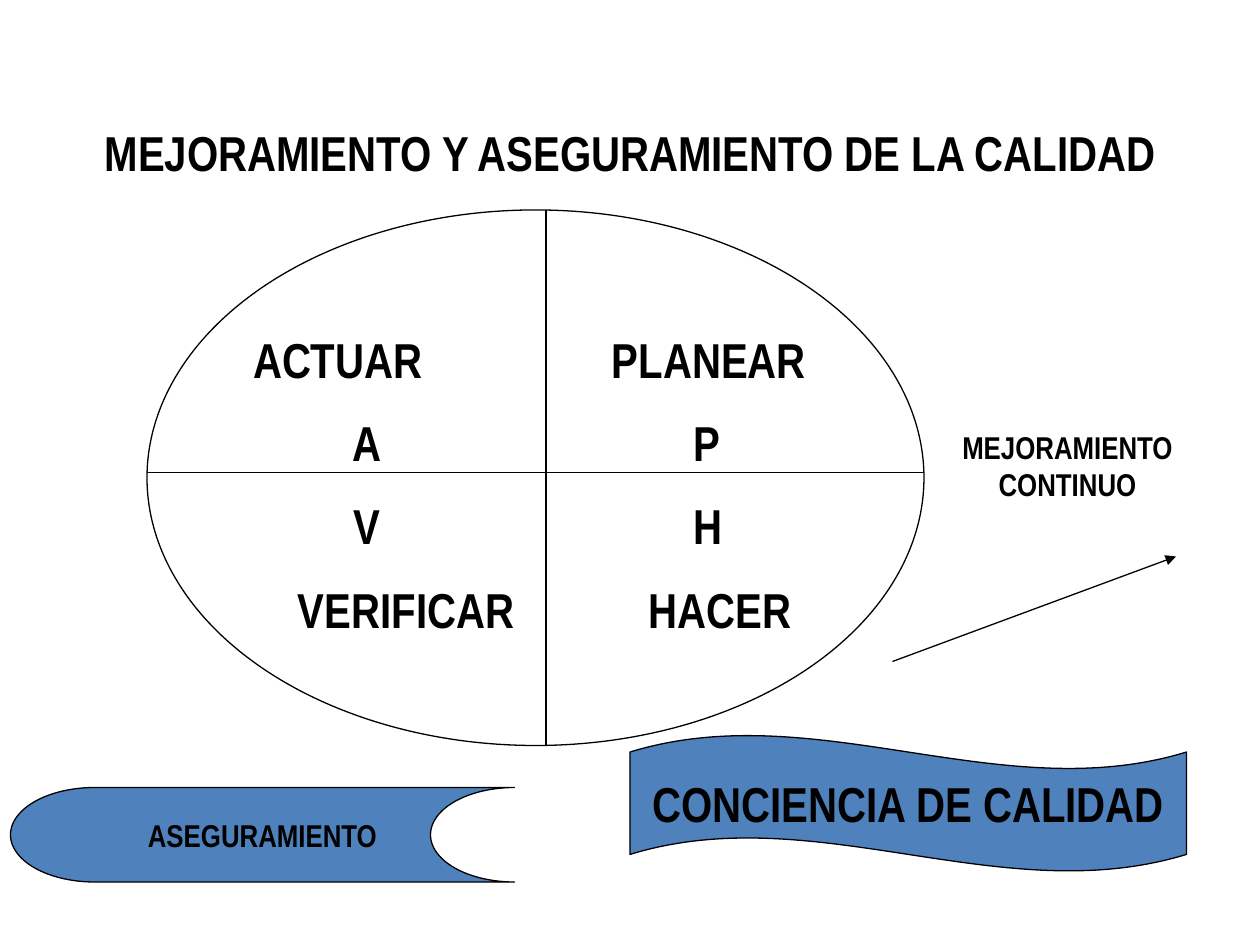
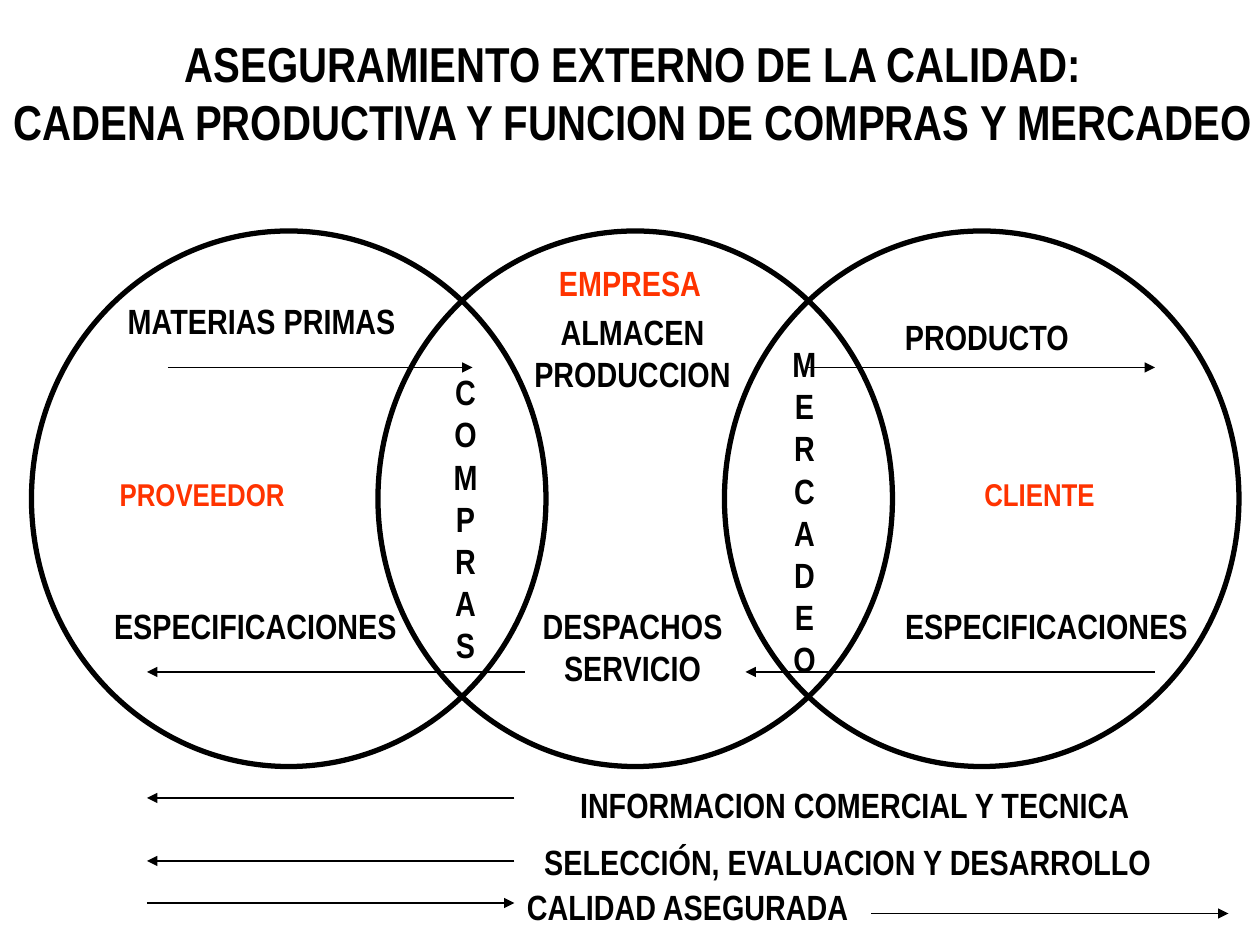
from typing import NamedTuple

from lxml import etree
from pptx import Presentation
from pptx.dml.color import RGBColor
from pptx.enum.shapes import MSO_CONNECTOR, MSO_SHAPE
from pptx.enum.text import MSO_ANCHOR, PP_ALIGN
from pptx.oxml.ns import qn
from pptx.util import Pt

BLACK = RGBColor(0x00, 0x00, 0x00)
BLUE = RGBColor(0x4F, 0x81, 0xBD)
RED = RGBColor(0xFF, 0x33, 0x00)
FONT = "Arial Narrow"
TITLE_SIZE, BODY_SIZE, SMALL_SIZE = 28, 20, 18
THIN, THICK = 0.75, 3

ELLIPSE = MSO_SHAPE.OVAL
WAVE = MSO_SHAPE.WAVE
STORAGE = MSO_SHAPE.FLOWCHART_STORED_DATA
STRAIGHT = MSO_CONNECTOR.STRAIGHT
CENTER = PP_ALIGN.CENTER
MIDDLE = MSO_ANCHOR.MIDDLE


class Label(NamedTuple):
    """Text centred on (x, y), in points."""
    text: str
    x: float
    y: float
    width: float
    size: float = BODY_SIZE
    color: RGBColor = BLACK


class Line(NamedTuple):
    x1: float
    y1: float
    x2: float
    y2: float
    arrow: bool = True


class Figure(NamedTuple):
    kind: int
    left: float
    top: float
    width: float
    height: float
    fill: RGBColor | None = None
    weight: float = THIN
    text: str = ""
    size: float = BODY_SIZE


def write_text(shape, text: str, *, size: float = BODY_SIZE,
               color: RGBColor = BLACK) -> None:
    frame = shape.text_frame
    frame.word_wrap = False
    frame.vertical_anchor = MIDDLE
    frame.text = text
    for paragraph in frame.paragraphs:
        paragraph.alignment = CENTER
        for run in paragraph.runs:
            run.font.name = FONT
            run.font.size = Pt(size)
            run.font.bold = True
            run.font.color.rgb = color


def draw_label(slide, label: Label) -> None:
    height = (label.text.count("\n") + 1) * label.size * 1.2 + 7.2
    box = slide.shapes.add_textbox(
        Pt(label.x - label.width / 2), Pt(label.y - height / 2),
        Pt(label.width), Pt(height))
    write_text(box, label.text, size=label.size, color=label.color)


def draw_line(slide, line: Line) -> None:
    connector = slide.shapes.add_connector(
        STRAIGHT, Pt(line.x1), Pt(line.y1), Pt(line.x2), Pt(line.y2))
    connector.line.color.rgb = BLACK
    connector.line.width = Pt(THIN)
    properties = connector._element.spPr
    if line.arrow:
        etree.SubElement(properties.find(qn("a:ln")), qn("a:tailEnd"), type="triangle")
    etree.SubElement(properties, qn("a:effectLst"))


def draw_figure(slide, figure: Figure) -> None:
    shape = slide.shapes.add_shape(
        figure.kind, Pt(figure.left), Pt(figure.top),
        Pt(figure.width), Pt(figure.height))
    shape.shadow.inherit = False
    if figure.fill is None:
        shape.fill.background()
    else:
        shape.fill.solid()
        shape.fill.fore_color.rgb = figure.fill
    shape.line.color.rgb = BLACK
    shape.line.width = Pt(figure.weight)
    if figure.text:
        write_text(shape, figure.text, size=figure.size)


def add_slide(deck, figures: list[Figure], lines: list[Line],
              labels: list[Label]) -> None:
    slide = deck.slides.add_slide(deck.slide_layouts[6])
    for figure in figures:
        draw_figure(slide, figure)
    for line in lines:
        draw_line(slide, line)
    for label in labels:
        draw_label(slide, label)


def add_improvement_cycle(deck) -> None:
    figures = [
        Figure(ELLIPSE, 84, 120, 444, 306),
        Figure(WAVE, 360, 420, 318, 78, BLUE,
               text="CONCIENCIA DE CALIDAD", size=TITLE_SIZE),
        Figure(STORAGE, 6, 450, 288, 54, BLUE,
               text="ASEGURAMIENTO", size=SMALL_SIZE),
    ]
    lines = [
        Line(312, 120, 312, 426, arrow=False),
        Line(84, 270, 528, 270, arrow=False),
        Line(510, 378, 672, 318),
    ]
    # Quadrant words: left text and centre, right text and centre
    quadrant_rows = [
        ("ACTUAR", 193, "PLANEAR", 405),
        ("A", 209.5, "P", 404),
        ("V", 209.5, "H", 404.5),
        ("VERIFICAR", 232, "HACER", 411.5),
    ]
    labels = [
        Label("MEJORAMIENTO Y ASEGURAMIENTO DE LA CALIDAD",
              360, 87, 672, TITLE_SIZE),
        Label("MEJORAMIENTO\nCONTINUO", 610, 266, 220, SMALL_SIZE),
    ]
    for row, (left, left_x, right, right_x) in enumerate(quadrant_rows):
        y = 205 + 47.6 * row
        labels += [Label(left, left_x, y, 140, TITLE_SIZE),
                   Label(right, right_x, y, 140, TITLE_SIZE)]
    add_slide(deck, figures, lines, labels)


def add_supply_chain(deck) -> None:
    # Supplier, company and customer overlap at an equal step
    circles = [Figure(ELLIPSE, 18 + 198 * i, 132, 294, 306, weight=THICK)
               for i in range(3)]
    flows = [
        Line(96, 210, 270, 210),
        Line(462, 210, 660, 210),
        Line(660, 384, 426, 384),
        Line(300, 384, 84, 384),
        Line(294, 456, 84, 456),
        Line(294, 492, 84, 492),
        Line(84, 516, 294, 516),
        Line(498, 522, 702, 522),
    ]
    labels = [
        Label("ASEGURAMIENTO EXTERNO DE LA CALIDAD:\n"
              "CADENA PRODUCTIVA Y FUNCION DE COMPRAS Y MERCADEO",
              361.5, 52.5, 729, TITLE_SIZE),
        # The three parties
        Label("PROVEEDOR", 115.5, 282, 140, SMALL_SIZE, RED),
        Label("EMPRESA", 360, 161.5, 96, color=RED),
        Label("CLIENTE", 594, 282, 99, SMALL_SIZE, RED),
        # What moves between them
        Label("MATERIAS PRIMAS", 149.5, 183, 168),
        Label("ALMACEN\nPRODUCCION", 361.5, 201.5, 141),
        Label("PRODUCTO", 564, 192, 109),
        Label("ESPECIFICACIONES", 146, 357.5, 176),
        Label("DESPACHOS\nSERVICIO", 361.5, 369.5, 141),
        Label("ESPECIFICACIONES", 598, 357.5, 176),
        # Functions in the overlaps, one letter a line
        Label("\n".join("COMPRAS"), 266, 296, 28),
        Label("\n".join("MERCADEO"), 459.7, 292, 28),
        # Flows below the chain
        Label("INFORMACION COMERCIAL Y TECNICA", 488.5, 459.7, 329),
        Label("SELECCIÓN, EVALUACION Y DESARROLLO", 484.5, 492, 363),
        Label("CALIDAD ASEGURADA", 393, 518, 199),
    ]
    add_slide(deck, circles, flows, labels)


def main() -> None:
    deck = Presentation()
    deck.slide_width, deck.slide_height = Pt(720), Pt(540)
    add_improvement_cycle(deck)
    add_supply_chain(deck)
    deck.save("out.pptx")


if __name__ == "__main__":
    main()
